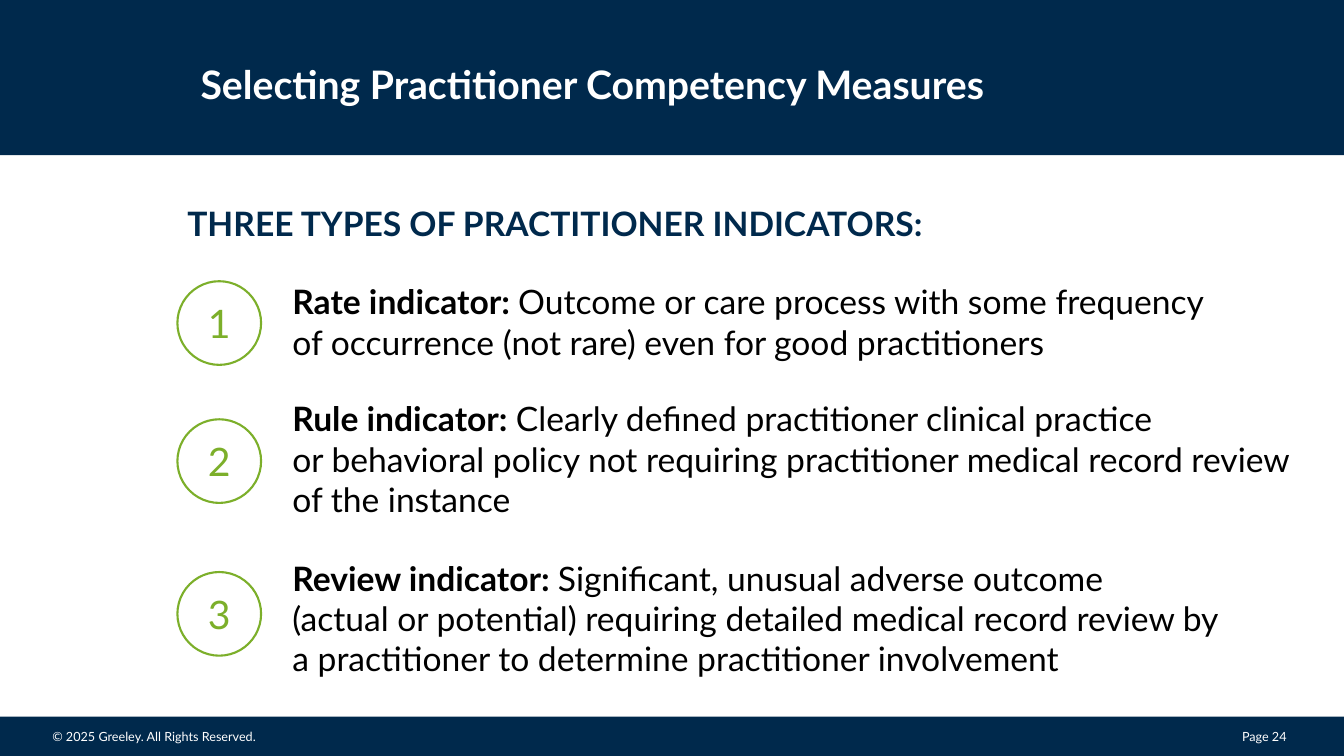
from pptx import Presentation
from pptx.dml.color import RGBColor
from pptx.enum.shapes import MSO_SHAPE
from pptx.enum.text import MSO_ANCHOR, PP_ALIGN
from pptx.util import Inches, Pt

NAVY = RGBColor(0x00, 0x29, 0x4C)
GREEN = RGBColor(0x7C, 0xAF, 0x2A)
WHITE = RGBColor(0xFF, 0xFF, 0xFF)
BLACK = RGBColor(0x00, 0x00, 0x00)
FONT = "Lato"
SLIDE_WIDTH, SLIDE_HEIGHT = 13.33, 7.5
BADGE_SIZE = 0.83
BADGE_OFFSET = 1.14

INDICATORS = [
    (2.79, 9.31, 0.83, "Rate indicator: ",
     "Outcome or care process with some frequency of occurrence (not rare) "
     "even for good practitioners"),
    (3.95, 9.95, 1.25, "Rule indicator: ",
     "Clearly defined practitioner clinical practice \nor behavioral policy not "
     "requiring practitioner medical record review of the instance"),
    (5.53, 9.18, 1.12, "Review indicator: ",
     "Significant, unusual adverse outcome \n(actual or potential) requiring detailed "
     "medical record review by a practitioner to determine practitioner involvement"),
]


def write(paragraph, text, size=24, color=BLACK, bold=False):
    for index, line in enumerate(text.split("\n")):
        if index:
            paragraph.add_line_break()
        run = paragraph.add_run()
        run.text = line
        run.font.name = FONT
        run.font.size = Pt(size)
        run.font.bold = bold
        run.font.color.rgb = color


def add_text_area(slide, left, top, width, height, inset=None):
    area = slide.shapes.add_textbox(
        Inches(left), Inches(top), Inches(width), Inches(height)).text_frame
    area.word_wrap = True
    if inset is not None:
        area.margin_left = area.margin_right = Inches(inset)
        area.margin_top = area.margin_bottom = Inches(inset)
    return area.paragraphs[0]


def add_band(slide, top, height):
    band = slide.shapes.add_shape(
        MSO_SHAPE.RECTANGLE, 0, Inches(top), Inches(SLIDE_WIDTH), Inches(height))
    band.shadow.inherit = False
    band.fill.solid()
    band.fill.fore_color.rgb = NAVY
    band.line.fill.background()


def add_footer(slide, top, height):
    add_band(slide, top, height)
    copyright_line = add_text_area(slide, 0.42, top + 0.07, 4.48, 0.25)
    write(copyright_line, "© 2025 Greeley. All Rights Reserved.", size=9, color=WHITE)
    page_number = add_text_area(slide, 12.22, top + 0.07, 1.05, 0.25)
    write(page_number, "Page 24", size=9, color=WHITE)


def add_header(slide, top, height):
    add_band(slide, top, height)
    title = add_text_area(slide, 1.89, top + 0.51, 11.21, 1.25)
    title.line_spacing = 1.08
    write(title, "Selecting Practitioner Competency Measures",
          size=28, color=WHITE, bold=True)


def add_subtitle(slide, left, top, width, height):
    subtitle = add_text_area(slide, left, top, width, height)
    subtitle.line_spacing = 1.08
    write(subtitle, "THREE TYPES OF PRACTITIONER INDICATORS:", color=NAVY, bold=True)


def add_indicator(slide, left, top, width, height, number, term, definition):
    description = add_text_area(slide, left, top, width, height, inset=0)
    write(description, term, bold=True)
    write(description, definition)

    badge = slide.shapes.add_shape(
        MSO_SHAPE.OVAL, Inches(left - BADGE_OFFSET),
        Inches(top + (height - BADGE_SIZE) / 2), Inches(BADGE_SIZE), Inches(BADGE_SIZE))
    badge.shadow.inherit = False
    badge.fill.background()
    badge.line.color.rgb = GREEN
    badge.line.width = Pt(1.5)
    badge.text_frame.vertical_anchor = MSO_ANCHOR.MIDDLE
    numeral = badge.text_frame.paragraphs[0]
    numeral.alignment = PP_ALIGN.CENTER
    write(numeral, str(number), size=28, color=GREEN)


def main():
    presentation = Presentation()
    presentation.slide_width = Inches(SLIDE_WIDTH)
    presentation.slide_height = Inches(SLIDE_HEIGHT)
    slide = presentation.slides.add_slide(presentation.slide_layouts[6])

    add_footer(slide, 7.11, 0.4)
    add_header(slide, 0, 1.54)
    add_subtitle(slide, 1.76, 1.93, 8.84, 0.42)
    for number, (top, width, height, term, definition) in enumerate(INDICATORS, 1):
        add_indicator(slide, 2.9, top, width, height, number, term, definition)

    presentation.save("out.pptx")


if __name__ == "__main__":
    main()
